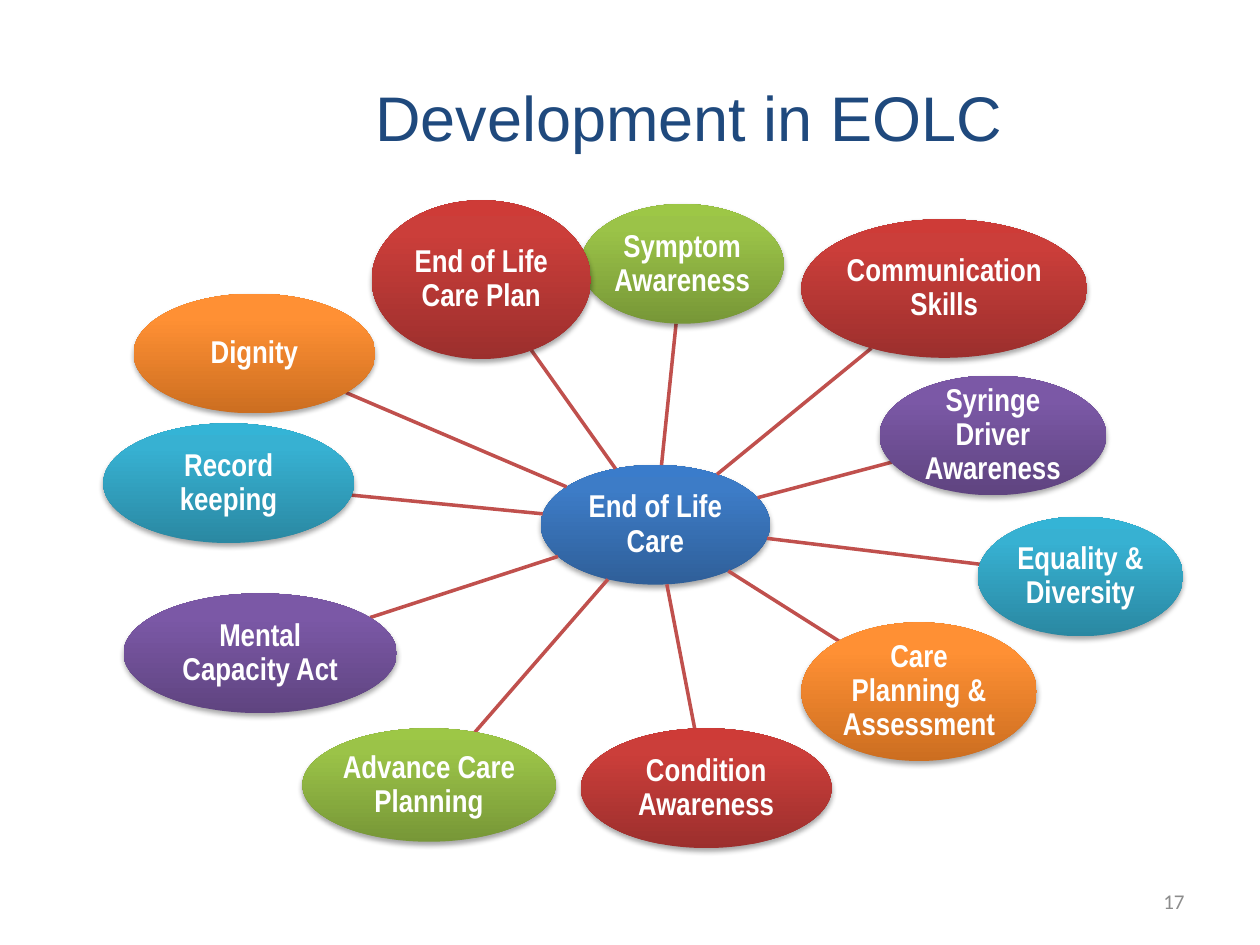
"""Build the slide that shows end of life care and its areas of development."""
from copy import deepcopy
from math import hypot
from typing import NamedTuple

from lxml import etree
from pptx import Presentation
from pptx.dml.color import RGBColor
from pptx.enum.shapes import MSO_CONNECTOR, MSO_SHAPE
from pptx.enum.text import MSO_ANCHOR, PP_ALIGN
from pptx.oxml import parse_xml
from pptx.oxml.ns import nsdecls, qn
from pptx.util import Pt

STRAIGHT = MSO_CONNECTOR.STRAIGHT
ELLIPSE = MSO_SHAPE.OVAL
MIDDLE = MSO_ANCHOR.MIDDLE
CENTER = PP_ALIGN.CENTER
RIGHT = PP_ALIGN.RIGHT

NAVY = RGBColor(0x1F, 0x49, 0x7D)
WHITE = RGBColor(0xFF, 0xFF, 0xFF)
GRAY = RGBColor(0x8C, 0x8C, 0x8C)
SPOKE_RED = RGBColor(0xC0, 0x50, 0x4D)

BLUE = (RGBColor(0x2F, 0x5F, 0x99), RGBColor(0x3D, 0x7C, 0xC7), RGBColor(0x3A, 0x7C, 0xCB))
RED = (RGBColor(0x9C, 0x2F, 0x2D), RGBColor(0xCB, 0x3E, 0x3A), RGBColor(0xCE, 0x3B, 0x37))
GREEN = (RGBColor(0x77, 0x97, 0x37), RGBColor(0x9B, 0xC3, 0x48), RGBColor(0x9D, 0xC7, 0x46))
PURPLE = (RGBColor(0x5F, 0x44, 0x80), RGBColor(0x7B, 0x58, 0xA6), RGBColor(0x7C, 0x57, 0xA8))
TEAL = (RGBColor(0x2A, 0x88, 0xA2), RGBColor(0x37, 0xB1, 0xD2), RGBColor(0x34, 0xB4, 0xD6))
ORANGE = (RGBColor(0xCC, 0x6E, 0x20), RGBColor(0xFF, 0x90, 0x34), RGBColor(0xFF, 0x91, 0x36))
STOP_POSITIONS = (0, 0.8, 1)


class Topic(NamedTuple):
    """An ellipse of the diagram, measured in points."""

    text: str
    left: float
    top: float
    width: float
    height: float
    colors: tuple

    def center(self):
        """Return the middle of the ellipse."""
        return self.left + self.width / 2, self.top + self.height / 2

    def edge_towards(self, other):
        """Return the point of the outline that faces another topic."""
        x, y = self.center()
        other_x, other_y = other.center()
        run, rise = other_x - x, other_y - y
        scale = 1 / hypot(run / (self.width / 2), rise / (self.height / 2))
        return x + run * scale, y + rise * scale


HUB = Topic("End of Life Care", 309, 265.7, 131, 68.4, BLUE)
TOPICS = (
    Topic("Communication Skills", 457.9, 125.3, 163.4, 79.2, RED),
    Topic("Symptom Awareness", 331.9, 116.6, 115.9, 68.4, GREEN),
    Topic("Syringe Driver Awareness", 502.6, 214.6, 129.6, 68.4, PURPLE),
    Topic("Equality & Diversity", 558.7, 295.2, 117.4, 68.4, TEAL),
    Topic("Care Planning & Assessment", 457.9, 355.7, 134.6, 79.2, ORANGE),
    Topic("Condition Awareness", 331.9, 416.2, 143.3, 68.4, RED),
    Topic("Advance Care Planning", 172.8, 416.2, 144.7, 64.8, GREEN),
    Topic("Mental Capacity Act", 70.6, 339.1, 156.2, 68.4, PURPLE),
    Topic("Record keeping", 59, 241.9, 143.3, 68.4, TEAL),
    Topic("Dignity", 76.3, 167.8, 138.2, 68.4, ORANGE),
    Topic("End of Life Care Plan", 212.4, 114.5, 125.3, 90.7, RED),
)


def add_run(paragraph, text, font_name, size, color, bold=False):
    """Add one formatted run to a paragraph."""
    run = paragraph.add_run()
    run.text = text
    run.font.name = font_name
    run.font.size = Pt(size)
    run.font.bold = bold
    run.font.color.rgb = color


def add_title(slide, text):
    """Place and fill the title placeholder."""
    title = slide.shapes.title
    title.left, title.top, title.width, title.height = Pt(103), Pt(21.6), Pt(581), Pt(90)
    title.text_frame.vertical_anchor = MIDDLE
    paragraph = title.text_frame.paragraphs[0]
    paragraph.alignment = CENTER
    add_run(paragraph, text, "Arial", 36, NAVY)


def fill_gradient(shape, colors):
    """Fill a shape with a three-stop gradient that rises from the bottom."""
    shape.fill.gradient()
    shape.fill.gradient_angle = 90
    stop_list = shape._element.spPr.find(".//" + qn("a:gsLst"))
    stop_list.append(deepcopy(stop_list[0]))
    for stop, position, color in zip(shape.fill.gradient_stops, STOP_POSITIONS, colors):
        stop.position = position
        stop.color.rgb = color


def add_shadow(shape):
    """Give a shape a soft shadow below it."""
    shape.shadow.inherit = False
    effects = shape._element.spPr.find(qn("a:effectLst"))
    effects.append(parse_xml(
        f'<a:outerShdw {nsdecls("a")} blurRad="{Pt(3.1)}" dist="{Pt(1.8)}" dir="5400000"'
        ' rotWithShape="0"><a:srgbClr val="000000"><a:alpha val="35000"/></a:srgbClr>'
        '</a:outerShdw>'))


def add_topic(slide, topic):
    """Add a labelled ellipse."""
    shape = slide.shapes.add_shape(
        ELLIPSE, Pt(topic.left), Pt(topic.top), Pt(topic.width), Pt(topic.height))
    fill_gradient(shape, topic.colors)
    shape.line.fill.background()
    add_shadow(shape)
    frame = shape.text_frame
    frame.word_wrap = True
    frame.vertical_anchor = MIDDLE
    frame.margin_left = frame.margin_right = frame.margin_top = frame.margin_bottom = Pt(0.9)
    paragraph = frame.paragraphs[0]
    paragraph.alignment = CENTER
    paragraph.line_spacing = 0.9
    paragraph.space_after = Pt(6.3)
    add_run(paragraph, topic.text, "Arial Narrow", 18, WHITE, bold=True)


def add_spoke(slide, hub, topic):
    """Add a line between the facing edges of the hub and a topic."""
    ends = hub.edge_towards(topic) + topic.edge_towards(hub)
    spoke = slide.shapes.add_connector(STRAIGHT, *(Pt(value) for value in ends))
    spoke.line.color.rgb = SPOKE_RED
    spoke.line.width = Pt(2)
    etree.SubElement(spoke._element.spPr, qn("a:effectLst"))


def add_page_number(slide, number):
    """Add the page number at the bottom right."""
    box = slide.shapes.add_textbox(Pt(516), Pt(500.5), Pt(168), Pt(28.8))
    box.text_frame.word_wrap = True
    box.text_frame.vertical_anchor = MIDDLE
    paragraph = box.text_frame.paragraphs[0]
    paragraph.alignment = RIGHT
    add_run(paragraph, number, "Calibri", 12, GRAY)


def main():
    """Build and save the presentation."""
    presentation = Presentation()
    presentation.slide_width, presentation.slide_height = Pt(720), Pt(540)
    slide = presentation.slides.add_slide(presentation.slide_layouts[5])
    add_title(slide, "Development in EOLC")
    add_topic(slide, HUB)
    for topic in TOPICS:
        add_spoke(slide, HUB, topic)
        add_topic(slide, topic)
    add_page_number(slide, "17")
    presentation.save("out.pptx")


if __name__ == "__main__":
    main()
